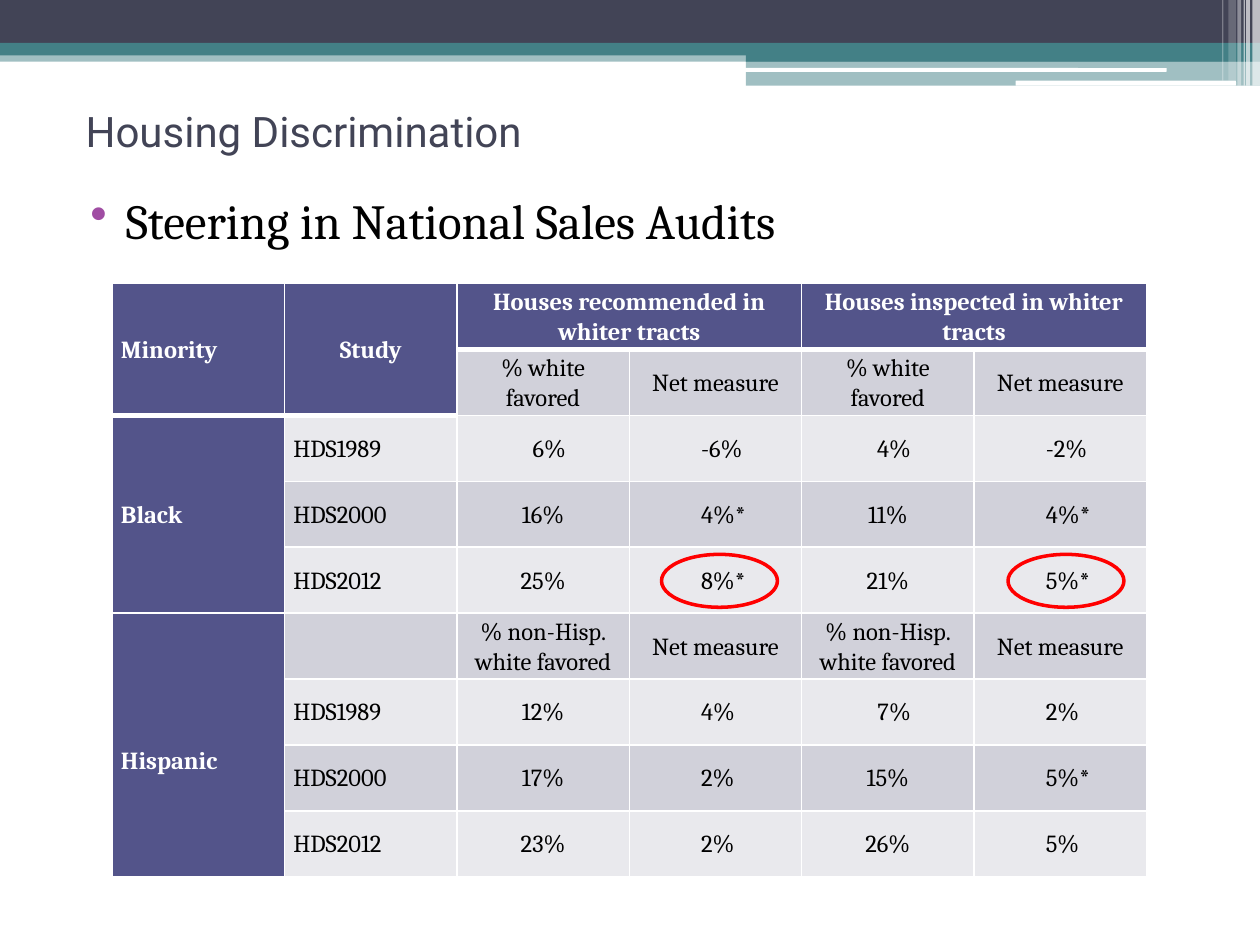
from lxml import etree
from pptx import Presentation
from pptx.dml.color import RGBColor
from pptx.enum.shapes import MSO_SHAPE
from pptx.enum.text import MSO_ANCHOR, PP_ALIGN
from pptx.oxml.ns import qn
from pptx.util import Inches, Pt

RECT, ROUNDED, OVAL = MSO_SHAPE.RECTANGLE, MSO_SHAPE.ROUNDED_RECTANGLE, MSO_SHAPE.OVAL
MIDDLE, LEFT, CENTER = MSO_ANCHOR.MIDDLE, PP_ALIGN.LEFT, PP_ALIGN.CENTER
WHITE = RGBColor(0xFF, 0xFF, 0xFF)
BLACK = RGBColor(0, 0, 0)
SLATE = RGBColor(0x42, 0x44, 0x56)
TEAL = RGBColor(0x43, 0x80, 0x86)
INDIGO = RGBColor(0x53, 0x54, 0x8A)
DARK_BAND = RGBColor(0xD1, 0xD1, 0xDA)
LIGHT_BAND = RGBColor(0xE9, 0xE9, 0xED)
RED = RGBColor(0xFF, 0, 0)


def apply(target, values):
    for name, value in values.items():
        setattr(target, name, value)


def write(frame, text, size, face, color, bold=False):
    paragraph = frame.paragraphs[0]
    paragraph.text = text
    apply(paragraph.font, {"size": Pt(size), "name": face, "bold": bold})
    paragraph.font.color.rgb = color
    return paragraph


prs = Presentation()
prs.slide_width, prs.slide_height = Inches(10), Inches(7.5)
slide = prs.slides.add_slide(prs.slide_layouts[6])

banner = [
    (RECT, 0, 0.4, 10, 0.09, TEAL, 50),
    (RECT, 0, 0, 10, 0.34, SLATE, 100),
    (RECT, 0, 0.34, 10, 0.1, TEAL, 100),
    (RECT, 5.92, 0.39, 4.08, 0.1, TEAL, 100),
    (RECT, 5.92, 0.48, 4.08, 0.2, TEAL, 50),
    (ROUNDED, 5.91, 0.54, 3.35, 0.03, WHITE, 100),
    (ROUNDED, 8.06, 0.64, 1.75, 0.04, WHITE, 100),
    (RECT, 9.94, 0, 0.06, 0.68, WHITE, 65),
    (RECT, 9.89, 0, 0.03, 0.68, WHITE, 65),
    (RECT, 9.87, 0, 0.01, 0.68, WHITE, 60),
    (RECT, 9.82, 0, 0.03, 0.68, WHITE, 40),
    (RECT, 9.75, 0, 0.06, 0.64, WHITE, 20),
    (RECT, 9.7, 0, 0.01, 0.64, WHITE, 30),
]
for kind, left, top, width, height, color, opacity in banner:
    bar = slide.shapes.add_shape(kind, Inches(left), Inches(top), Inches(width), Inches(height))
    bar.shadow.inherit = False
    bar.line.fill.background()
    bar.fill.solid()
    bar.fill.fore_color.rgb = color
    if opacity < 100:
        tint = bar.fill._xPr.find(qn("a:solidFill"))[0]
        etree.SubElement(tint, qn("a:alpha"), val=str(opacity * 1000))

title = slide.shapes.add_textbox(Inches(0.5), Inches(0.75), Inches(9), Inches(0.58)).text_frame
apply(title, {"word_wrap": True, "vertical_anchor": MIDDLE, "margin_left": Inches(0.18)})
write(title, "Housing Discrimination", 24, "Roboto", SLATE)

body = slide.shapes.add_textbox(Inches(0.5), Inches(1.42), Inches(9), Inches(5.86)).text_frame
apply(body, {"word_wrap": True, "margin_top": Inches(0.09)})
bullet = body.paragraphs[0]._p.get_or_add_pPr()
bullet.set("marL", str(Inches(0.4)))
bullet.set("indent", str(Inches(-0.28)))
bullet_color = etree.SubElement(bullet, qn("a:buClr"))
etree.SubElement(bullet_color, qn("a:srgbClr"), val="A04DA3")
etree.SubElement(bullet, qn("a:buChar"), char="•")
write(body, "Steering in National Sales Audits", 28, "Cambria", BLACK)

rows = [
    ["Minority", "Study", "Houses recommended in whiter tracts", "", "Houses inspected in whiter tracts", ""],
    ["", "", "% white favored", "Net measure", "% white favored", "Net measure"],
    ["Black", "HDS1989", "6%", "-6%", "4%", "-2%"],
    ["", "HDS2000", "16%", "4%*", "11%", "4%*"],
    ["", "HDS2012", "25%", "8%*", "21%", "5%*"],
    ["Hispanic", "", "% non-Hisp. white favored", "Net measure", "% non-Hisp. white favored", "Net measure"],
    ["", "HDS1989", "12%", "4%", "7%", "2%"],
    ["", "HDS2000", "17%", "2%", "15%", "5%*"],
    ["", "HDS2012", "23%", "2%", "26%", "5%"],
]
audits = slide.shapes.add_table(len(rows), 6, Inches(0.89), Inches(2.25), Inches(8.21), Inches(4.71)).table
apply(audits, {"first_row": False, "horz_banding": False})
merges = [(0, 0, 1, 0), (0, 1, 1, 1), (0, 2, 0, 3), (0, 4, 0, 5), (2, 0, 4, 0), (5, 0, 8, 0)]
for top, left, bottom, right in merges:
    audits.cell(top, left).merge(audits.cell(bottom, right))

for r, row in enumerate(rows):
    for c, text in enumerate(row):
        cell = audits.cell(r, c)
        heading_end = 1 if c < 2 else 0
        heading = r <= heading_end
        dark = heading or c == 0
        widths = {"L": 1, "R": 1, "T": 3 if r == heading_end + 1 else 1, "B": 3 if heading else 1}
        for side, width in widths.items():
            edge = etree.SubElement(cell._tc.get_or_add_tcPr(), qn(f"a:ln{side}"), w=str(Pt(width)))
            etree.SubElement(etree.SubElement(edge, qn("a:solidFill")), qn("a:srgbClr"), val="FFFFFF")
        cell.fill.solid()
        cell.fill.fore_color.rgb = INDIGO if dark else DARK_BAND if r % 2 else LIGHT_BAND
        net_value = c in (3, 5) and "%" in text
        margin = 0.57 if net_value else 0.17 if c > 1 and len(text) == 2 else 0.07
        apply(cell, {
            "vertical_anchor": MIDDLE,
            "margin_left": Inches(margin),
            "margin_right": Inches(0.07),
            "margin_top": Inches(0.24 if text == "Hispanic" else 0),
            "margin_bottom": 0,
        })
        if text:
            label = write(cell.text_frame, text, 14, "Cambria", WHITE if dark else BLACK, dark)
            left_aligned = c == 0 or net_value or (c == 1 and not heading)
            apply(label, {"alignment": LEFT if left_aligned else CENTER, "line_spacing": 1.07})

for left in (5.25, 8):
    highlight = slide.shapes.add_shape(OVAL, Inches(left), Inches(4.4), Inches(0.92), Inches(0.42))
    highlight.shadow.inherit = False
    highlight.fill.background()
    highlight.line.color.rgb = RED
    highlight.line.width = Pt(2)

prs.save("out.pptx")
